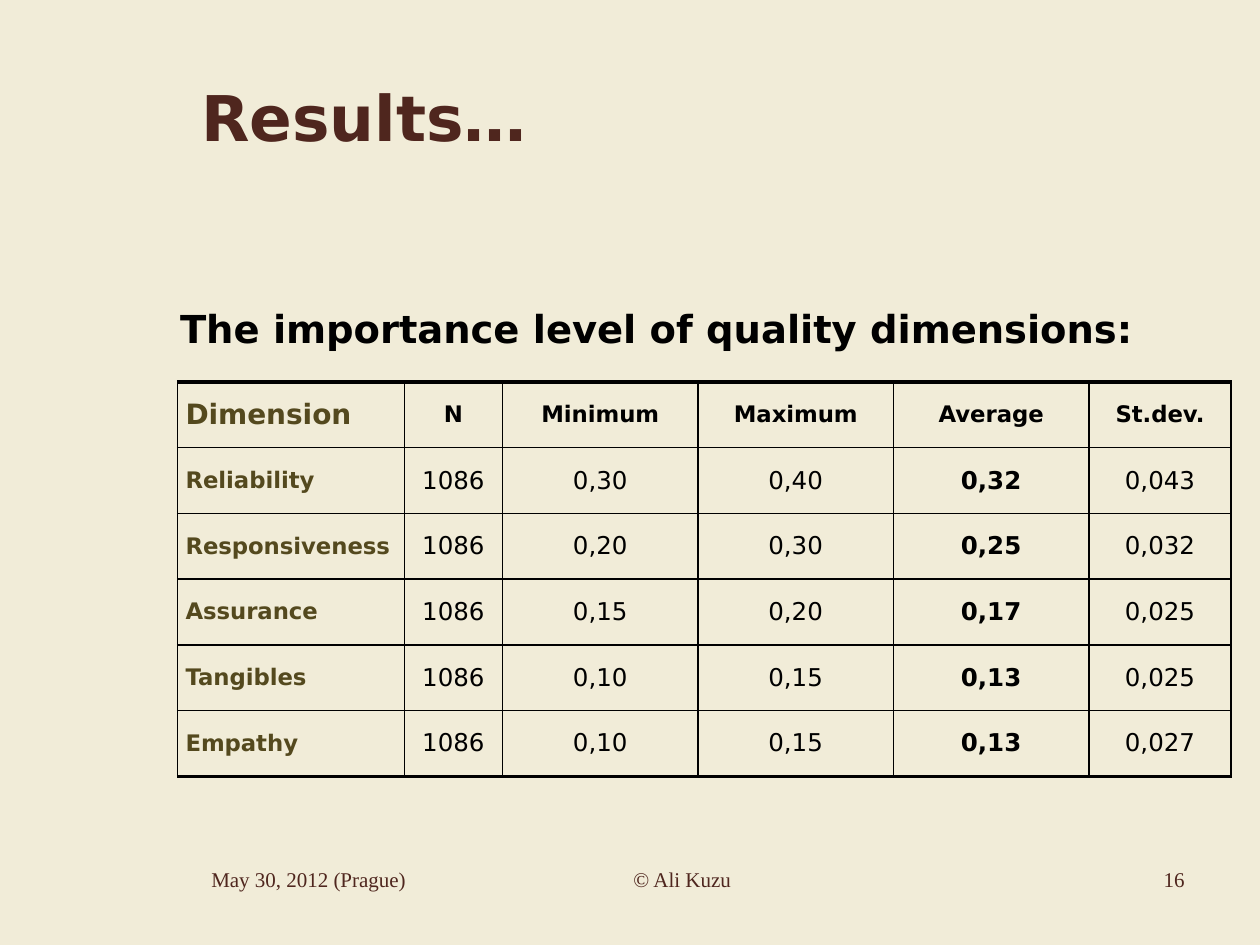
import pptx
import pptx.dml.color
import pptx.enum.text
import pptx.oxml
import pptx.oxml.ns
import pptx.util
from pptx.util import Cm

ALIGN = pptx.enum.text.PP_ALIGN
MIDDLE = pptx.enum.text.MSO_ANCHOR.MIDDLE
SANS = "DejaVu Sans"
SERIF = "Times New Roman"
BROWN, OLIVE, BLACK, CREAM = "4F261E", "54491E", "000000", "F1ECD8"

COLUMN_WIDTHS = [4.57, 1.98, 3.94, 3.94, 3.94, 2.87]
TABLE_HEIGHT = 7.95
AVERAGE_COLUMN = 4
RESULTS = [
    ["Dimension", "N", "Minimum", "Maximum", "Average", "St.dev."],
    ["Reliability", "1086", "0,30", "0,40", "0,32", "0,043"],
    ["Responsiveness", "1086", "0,20", "0,30", "0,25", "0,032"],
    ["Assurance", "1086", "0,15", "0,20", "0,17", "0,025"],
    ["Tangibles", "1086", "0,10", "0,15", "0,13", "0,025"],
    ["Empathy", "1086", "0,10", "0,15", "0,13", "0,027"],
]


def rgb(value):
    return pptx.dml.color.RGBColor.from_string(value)


def style_paragraph(paragraph, text, size, color, font=SANS, bold=False, align=ALIGN.LEFT):
    paragraph.text = text
    paragraph.alignment = align
    paragraph.font.name = font
    paragraph.font.size = pptx.util.Pt(size)
    paragraph.font.bold = bold
    paragraph.font.color.rgb = rgb(color)


def add_text(slide, box, text, size, color, anchor=pptx.enum.text.MSO_ANCHOR.TOP, **style):
    frame = slide.shapes.add_textbox(*(Cm(length) for length in box)).text_frame
    frame.word_wrap = True
    frame.vertical_anchor = anchor
    style_paragraph(frame.paragraphs[0], text, size, color, **style)
    return frame.paragraphs[0]


def set_borders(cell, widths):
    """Put black borders, given in points by side letter, in front of the cell fill."""
    properties = cell._tc.get_or_add_tcPr()
    for position, side in enumerate("LRTB"):
        border = pptx.oxml.parse_xml(
            f'<a:ln{side} {pptx.oxml.ns.nsdecls("a")} w="{pptx.util.Pt(widths[side])}">'
            f'<a:solidFill><a:srgbClr val="{BLACK}"/></a:solidFill></a:ln{side}>'
        )
        properties.insert(position, border)


def add_results_table(slide):
    last_row = len(RESULTS) - 1
    table = slide.shapes.add_table(
        len(RESULTS), len(COLUMN_WIDTHS),
        Cm(3.58), Cm(7.7), Cm(sum(COLUMN_WIDTHS)), Cm(TABLE_HEIGHT),
    ).table
    for column, width in zip(table.columns, COLUMN_WIDTHS):
        column.width = Cm(width)
    for r, record in enumerate(RESULTS):
        table.rows[r].height = Cm(TABLE_HEIGHT / len(RESULTS))
        for c, text in enumerate(record):
            cell = table.cell(r, c)
            cell.fill.background()
            cell.vertical_anchor = MIDDLE
            cell.margin_left = cell.margin_right = Cm(0.16)
            cell.margin_top = cell.margin_bottom = Cm(0.08)
            is_label = r == 0 or c == 0
            size = 16 if r == c == 0 else 13 if is_label else 14
            style_paragraph(
                cell.text_frame.paragraphs[0], text, size,
                OLIVE if c == 0 else BLACK,
                bold=is_label or c == AVERAGE_COLUMN,
                align=ALIGN.LEFT if c == 0 else ALIGN.CENTER,
            )
            set_borders(cell, {"L": 1, "R": 1, "T": 2 if r == 0 else 1,
                               "B": 2 if r == last_row else 1})


def add_footer(slide):
    for left, width, text, align in [
        (3.81, 5.28, "May 30, 2012 (Prague)", ALIGN.LEFT),
        (9.73, 8.05, "© Ali Kuzu", ALIGN.CENTER),
        (18.21, 5.92, "16", ALIGN.RIGHT),
    ]:
        if align == ALIGN.LEFT:
            left += 0.2
        add_text(slide, (left, 17.34, width, 1.32), text, 12, BROWN, font=SERIF, align=align)


def main():
    deck = pptx.Presentation()
    deck.slide_width, deck.slide_height = Cm(25.4), Cm(19.05)
    slide = deck.slides.add_slide(deck.slide_layouts[6])
    slide.background.fill.solid()
    slide.background.fill.fore_color.rgb = rgb(CREAM)

    add_text(slide, (3.81, 0.76, 20.32, 3.18), "Results…", 36, BROWN, anchor=MIDDLE, bold=True)
    add_footer(slide)
    add_results_table(slide)
    heading = add_text(slide, (3.38, 5.56, 21.44, 1.98),
                       "The importance level of quality dimensions:", 22, BLACK,
                       bold=True, align=ALIGN.JUSTIFY)
    heading.line_spacing = 1.5
    deck.save("out.pptx")


if __name__ == "__main__":
    main()
